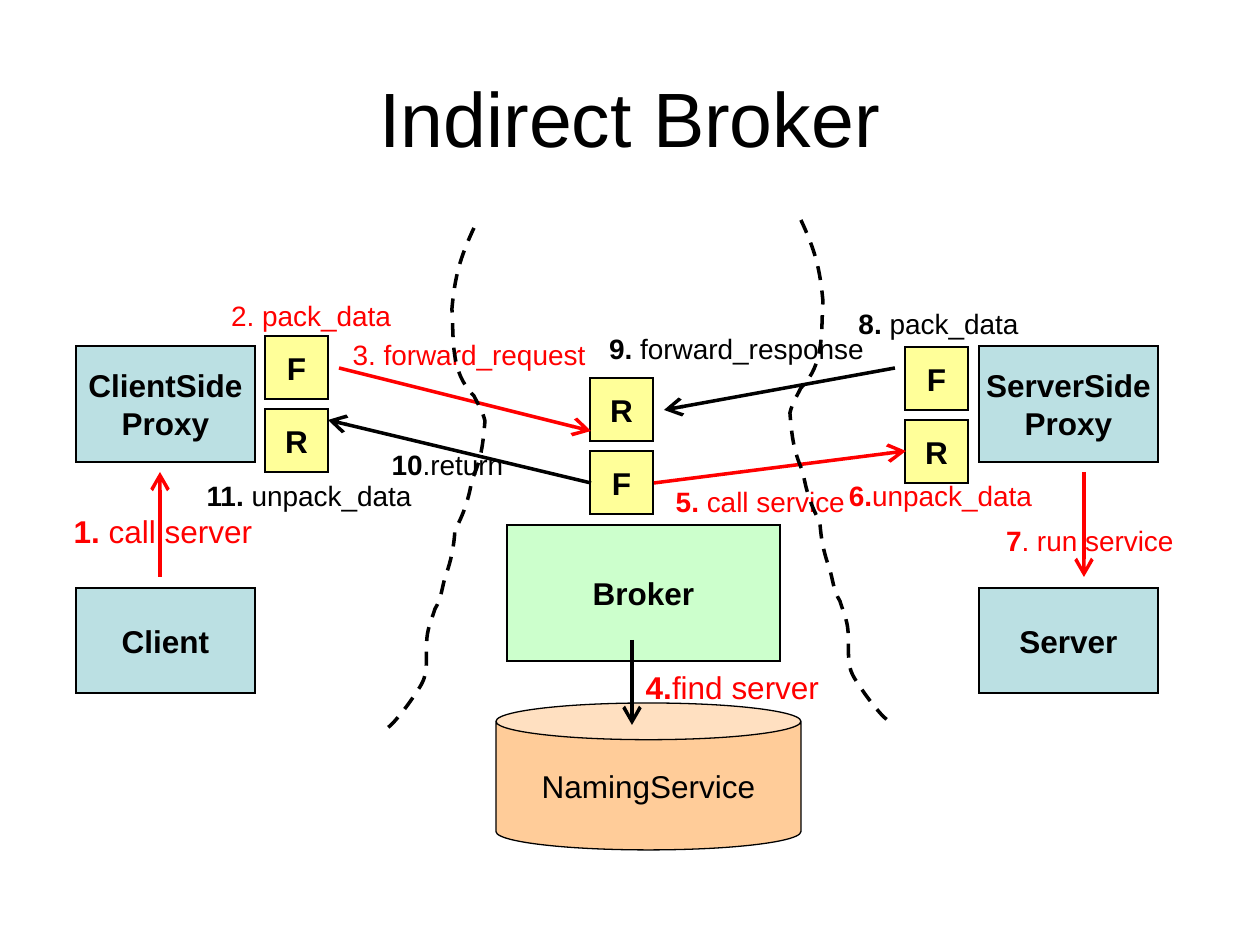
from dataclasses import dataclass

from lxml import etree
from pptx import Presentation
from pptx.dml.color import RGBColor
from pptx.enum.dml import MSO_LINE
from pptx.enum.shapes import MSO_CONNECTOR, MSO_SHAPE
from pptx.enum.text import MSO_ANCHOR, MSO_AUTO_SIZE, PP_ALIGN
from pptx.oxml.ns import qn
from pptx.util import Pt

PX = 914400 // 126
RECT, CAN = MSO_SHAPE.RECTANGLE, MSO_SHAPE.CAN
STRAIGHT = MSO_CONNECTOR.STRAIGHT
CENTER, MIDDLE, TOP = PP_ALIGN.CENTER, MSO_ANCHOR.MIDDLE, MSO_ANCHOR.TOP
FIT, DASH = MSO_AUTO_SIZE.SHAPE_TO_FIT_TEXT, MSO_LINE.DASH


@dataclass(frozen=True)
class Theme:
    font: str = "Arial"
    ink: str = "000000"
    red: str = "FF0000"
    node: str = "BBE0E3"
    tile: str = "FFFF99"
    broker: str = "CCFFCC"
    store: str = "FFCC99"
    title: int = 44
    body: int = 18
    small: int = 16
    edge: float = 1.25
    thin: float = 0.75
    flow: int = 2


THEME = Theme()
TILE, STEP = 63, 73

# Each bend: two control points and an end point, relative to the divider box.
START = (91, 0)
BENDS = [
    ((77, 30), (72, 48), (69, 81)),
    ((71, 112), (67, 144), (91, 168)),
    ((95, 176), (100, 184), (102, 193)),
    ((100, 218), (98, 232), (89, 252)),
    ((86, 270), (81, 286), (72, 302)),
    ((71, 319), (68, 333), (63, 347)),
    ((59, 358), (59, 370), (52, 381)),
    ((49, 391), (45, 399), (44, 410)),
    ((42, 435), (47, 445), (35, 462)),
    ((28, 473), (20, 484), (11, 494)),
    ((0, 506), (0, 499), (0, 506)),
]

# Box, lead, bold number, plain wording, colour, size
LABELS = [
    ((52, 506, 213, 50), " ", "1. ", "call server", THEME.red, THEME.body),
    ((218, 292, 186, 46), "", "", "2. pack_data", THEME.red, THEME.small),
    ((624, 662, 208, 50), " ", "4.", "find server", THEME.red, THEME.body),
    ((984, 514, 203, 50), " ", "7", ". run service", THEME.red, THEME.small),
    ((654, 475, 204, 50), " ", "5. ", "call service", THEME.red, THEME.small),
    ((339, 331, 260, 46), "", "", "3. forward_request", THEME.red,
     THEME.small),
    ((836, 472, 209, 46), "", "6.", "unpack_data", THEME.red, THEME.small),
    ((846, 300, 185, 46), "", "8.", " pack_data", THEME.ink, THEME.small),
    ((596, 325, 281, 46), "", "9.", " forward_response", THEME.ink,
     THEME.small),
    ((379, 441, 137, 46), "", "10", ".return", THEME.ink, THEME.small),
    ((193, 472, 232, 46), "", "11.", " unpack_data", THEME.ink, THEME.small),
]


def rgb(code):
    return RGBColor.from_string(code)


def emu(*values):
    return [round(v * PX) for v in values]


def write(para, text, size, color=THEME.ink, bold=False):
    para.alignment = CENTER
    run = para.add_run()
    run.text = text
    run.font.name, run.font.size = THEME.font, Pt(size)
    run.font.bold, run.font.color.rgb = bold, rgb(color)


def stroke(shape, color, width):
    """Set a line with sharp corners and return its XML element."""
    shape.line.color.rgb = rgb(color)
    shape.line.width = Pt(width)
    ln = shape.line._get_or_add_ln()
    etree.SubElement(ln, qn("a:miter"), lim="800000")
    return ln


def block(slide, box, lines, fill, kind=RECT, edge=THEME.edge, bold=True):
    shape = slide.shapes.add_shape(kind, *emu(*box))
    shape.shadow.inherit = False
    shape.fill.solid()
    shape.fill.fore_color.rgb = rgb(fill)
    stroke(shape, THEME.ink, edge)
    frame = shape.text_frame
    frame.word_wrap, frame.vertical_anchor = False, MIDDLE
    for i, line in enumerate(lines):
        para = frame.add_paragraph() if i else frame.paragraphs[0]
        write(para, line, THEME.body, bold=bold)


def arrow(slide, start, end, color):
    line = slide.shapes.add_connector(STRAIGHT, *emu(*start, *end))
    ln = stroke(line, color, THEME.flow)
    etree.SubElement(ln, qn("a:tailEnd"), type="arrow", w="lg", len="lg")
    etree.SubElement(line._element.spPr, qn("a:effectLst"))


def label(slide, box, lead, number, words, color, size):
    shape = slide.shapes.add_textbox(*emu(*box))
    frame = shape.text_frame
    frame.word_wrap, frame.auto_size, frame.vertical_anchor = False, FIT, TOP
    para = frame.paragraphs[0]
    if lead:
        write(para, lead, THEME.body, bold=True)
    if number:
        write(para, number, size, color, True)
    write(para, words, size, color)


def tiles(slide, x, y, names):
    for i, name in enumerate(names):
        block(slide, (x, y + i * STEP, TILE, TILE), [name], THEME.tile)


def side(slide, box, name, proxy, tile, call):
    """Proxy above its process; tile is an offset, call is (dx, from dy, to dy)."""
    x, y, w, h = box
    block(slide, (x, y + h - 105, w, 105), [name], THEME.node)
    block(slide, (x, y, w, 116), [proxy, "Proxy"], THEME.node)
    tiles(slide, x + tile[0], y + tile[1], "FR")
    dx, start, end = call
    arrow(slide, (x + dx, y + start), (x + dx, y + end), THEME.red)


def hub(slide, box):
    """Broker with its tiles on top and the naming store below."""
    x, y, w, h = box
    block(slide, (x + 11, y + 147, 273, 136), ["Broker"], THEME.broker)
    tiles(slide, x + 94, y, "RF")
    block(slide, (x, y + h - 147, w, 147), ["NamingService"], THEME.store,
          CAN, THEME.thin, False)
    arrow(slide, (x + 136, y + 262), (x + 136, y + 347), THEME.ink)


def divider(slide, box, flip=False):
    """Dashed curve, mirrored left to right on request."""
    x, y, w, _ = box

    def place(point):
        return (w - point[0] if flip else point[0], point[1])

    pen = slide.shapes.build_freeform(*place(START), scale=PX)
    pen.add_line_segments([place(bend[-1]) for bend in BENDS], close=False)
    shape = pen.convert_to_shape(*emu(x, y))
    for part, bend in zip(list(shape._element.iter(qn("a:lnTo"))), BENDS):
        cubic = etree.Element(qn("a:cubicBezTo"))
        for px, py in map(place, bend):
            etree.SubElement(cubic, qn("a:pt"), x=str(px), y=str(py))
        part.getparent().replace(part, cubic)
    shape.shadow.inherit = False
    shape.fill.background()
    stroke(shape, THEME.ink, THEME.flow)
    shape.line.dash_style = DASH


def heading(slide, box, text):
    title = slide.shapes.title
    title.left, title.top, title.width, title.height = emu(*box)
    title.text_frame.vertical_anchor = MIDDLE
    write(title.text_frame.paragraphs[0], text, THEME.title)


def main():
    deck = Presentation()
    deck.slide_width, deck.slide_height = emu(1260, 945)
    slide = deck.slides.add_slide(deck.slide_layouts[5])
    heading(slide, (63, 38, 1134, 157), "Indirect Broker")
    side(slide, (76, 346, 179, 347), "Client", "ClientSide",
         (189, -10), (84, 231, 126))
    side(slide, (979, 346, 179, 347), "Server", "ServerSide",
         (-74, 1), (105, 126, 231))
    hub(slide, (496, 378, 305, 472))
    arrow(slide, (339, 368), (591, 431), THEME.red)
    arrow(slide, (654, 483), (906, 451), THEME.red)
    arrow(slide, (895, 368), (664, 410), THEME.ink)
    arrow(slide, (591, 483), (328, 420), THEME.ink)
    for item in LABELS:
        label(slide, *item)
    divider(slide, (383, 228, 102, 506))
    divider(slide, (790, 220, 102, 506), flip=True)
    deck.save("out.pptx")


if __name__ == "__main__":
    main()
